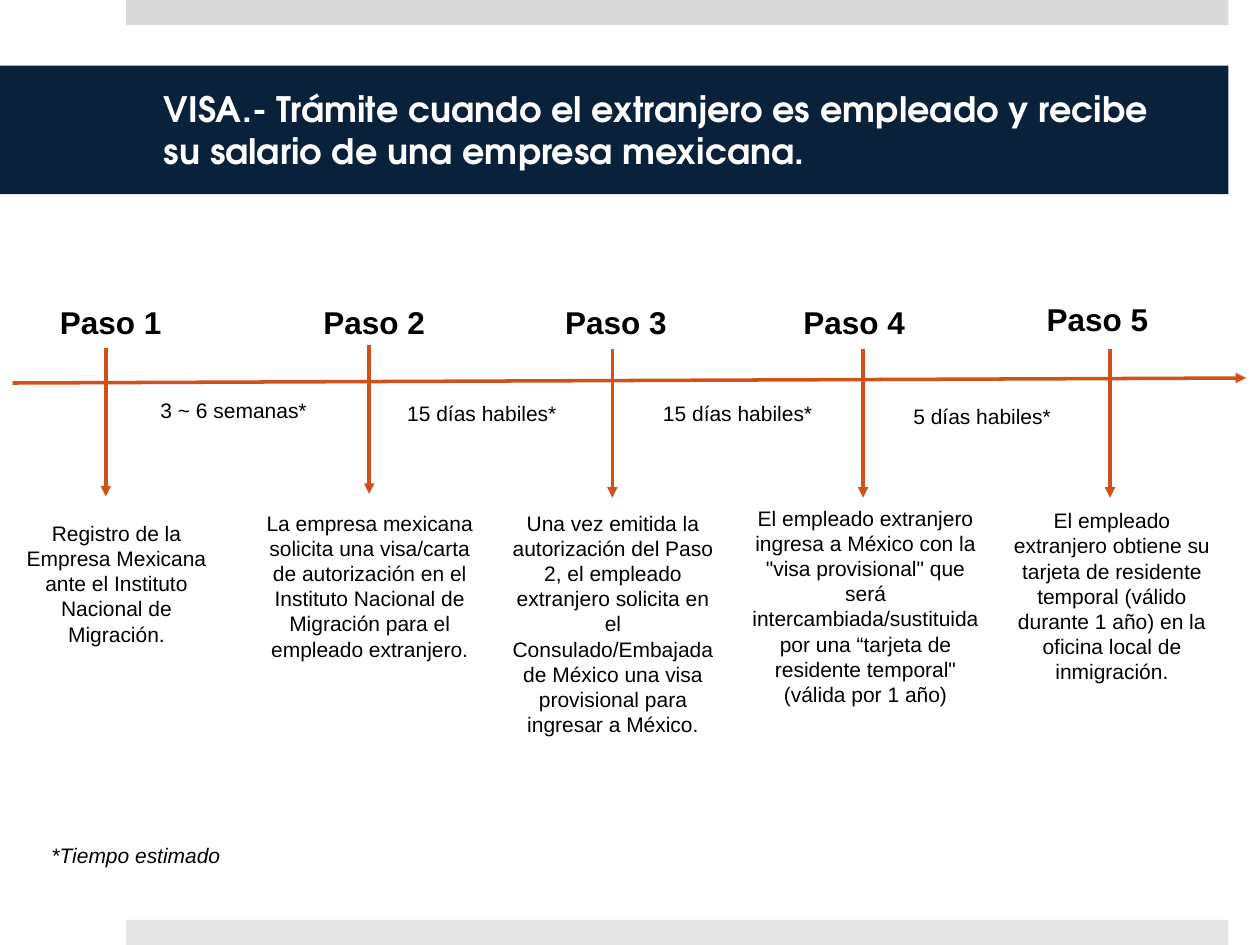
"""Build the slide with the five-step visa timeline."""
from lxml import etree
from pptx import Presentation
from pptx.dml.color import RGBColor
from pptx.enum import shapes, text
from pptx.oxml.ns import qn
from pptx.util import Inches, Pt

COLORS = {"navy": "09213B", "orange": "D0511A", "top": "D9D9D9",
          "bottom": "E5E5E5", "white": "FFFFFF", "black": "000000"}
TITLE = ("VISA.- Trámite cuando el extranjero es empleado y recibe "
         "su salario de una empresa mexicana.")
BANDS = [(0, "top"), (7.3, "bottom")]
AXIS = (0.1, 3.04, 9.89, 3)
ARROW_LENGTH = 1.18
LABEL_WIDTH = 1.85
# label left, label top, arrow x, arrow top, text left, text top, width, height, text
STEPS = [
    (0.3, 2.36, 0.84, 2.76, 0, 4.08, 1.85, 1.11,
     "Registro de la Empresa Mexicana ante el Instituto Nacional de Migración."),
    (2.39, 2.36, 2.93, 2.74, 2.01, 4, 1.85, 1.31,
     "La empresa mexicana solicita una visa/carta de autorización en el "
     "Instituto Nacional de Migración para el empleado extranjero."),
    (4.31, 2.36, 4.86, 2.77, 3.94, 4, 1.85, 1.92,
     "Una vez emitida la autorización del Paso 2, el empleado extranjero solicita "
     "en el Consulado/Embajada de México una visa provisional para ingresar a México."),
    (6.2, 2.36, 6.85, 2.77, 5.84, 3.96, 2.06, 1.72,
     "El empleado extranjero ingresa a México con la \"visa provisional\" que será "
     "intercambiada/sustituida por una “tarjeta de residente temporal\" (válida por 1 año)"),
    (8.13, 2.33, 8.81, 2.77, 7.9, 3.98, 1.85, 1.51,
     "El empleado extranjero obtiene su tarjeta de residente temporal "
     "(válido durante 1 año) en la oficina local de inmigración."),
]
WAITS = [(0.93, 3.11, "3 ~ 6 semanas*"), (2.9, 3.13, "15 días habiles*"),
         (4.93, 3.13, "15 días habiles*"), (6.87, 3.15, "5 días habiles*")]
NOTE = "*Tiempo estimado"


def rgb(name):
    return RGBColor.from_string(COLORS[name])


def write(sp, words, size, color="black", align="LEFT", font="Arial", bold=False, italic=False):
    tf = sp.text_frame
    tf.word_wrap = True
    p = tf.paragraphs[0]
    p.text = words
    p.alignment = getattr(text.PP_ALIGN, align)
    p.font.size, p.font.name = Pt(size), font
    p.font.bold, p.font.italic = bold, italic
    p.font.color.rgb = rgb(color)
    return tf


def add_text(s, box, words, size=12, **style):
    sp = s.shapes.add_textbox(*map(Inches, box))
    write(sp, words, size, **style).auto_size = text.MSO_AUTO_SIZE.SHAPE_TO_FIT_TEXT


def add_bar(s, box, color):
    sp = s.shapes.add_shape(shapes.MSO_SHAPE.RECTANGLE, *map(Inches, box))
    sp.shadow.inherit = False
    sp.fill.solid()
    sp.fill.fore_color.rgb = rgb(color)
    sp.line.fill.background()
    return sp


def add_arrow(s, ends):
    c = s.shapes.add_connector(shapes.MSO_CONNECTOR.STRAIGHT, *map(Inches, ends))
    c.line.color.rgb = rgb("orange")
    c.line.width = Pt(2)
    etree.SubElement(c.line._get_or_add_ln(), qn("a:tailEnd"), type="triangle")
    etree.SubElement(c._element.spPr, qn("a:effectLst"))


def main():
    prs = Presentation()
    prs.slide_width, prs.slide_height = Inches(10), Inches(7.5)
    s = prs.slides.add_slide(prs.slide_layouts[6])
    for top, color in BANDS:
        add_bar(s, (1, top, 8.75, 0.2), color)
    title = add_bar(s, (0, 0.52, 9.75, 1.02), "navy")
    tf = write(title, TITLE, 20, "white", font="TeX Gyre Adventor", bold=True)
    tf.vertical_anchor = text.MSO_ANCHOR.MIDDLE
    tf.margin_left, tf.margin_right = Inches(1.3), Inches(0.3)

    add_arrow(s, AXIS)
    for i, (left, top, x, y, *box, words) in enumerate(STEPS, 1):
        add_text(s, (left, top, 1.08, 0.4), f"Paso {i}", 18, align="RIGHT", bold=True)
        add_arrow(s, (x, y, x, y + ARROW_LENGTH))
        add_text(s, box, words, align="CENTER")
    for left, top, words in WAITS:
        add_text(s, (left, top, LABEL_WIDTH, 0.3), words, align="CENTER")
    add_text(s, (0.31, 6.64, 7.61, 0.3), NOTE, italic=True)
    prs.save("out.pptx")


if __name__ == "__main__":
    main()
